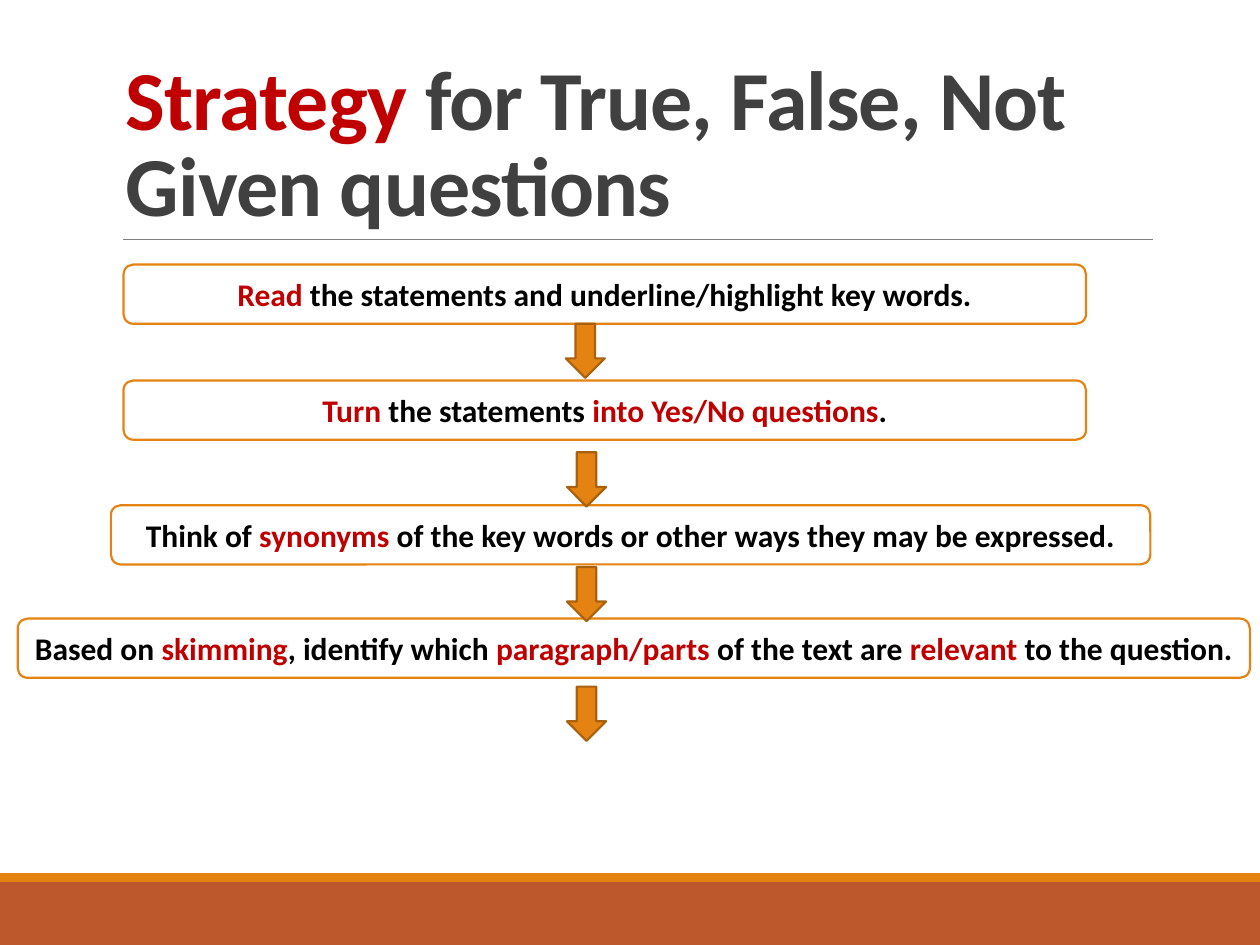
from lxml import etree
from pptx import Presentation
from pptx import util as u
from pptx.dml.color import RGBColor
from pptx.enum import shapes, text
from pptx.oxml.ns import qn

INK = {
    "red": "C00000",
    "gray": "404040",
    "black": "000000",
    "white": "FFFFFF",
    "gold": "E48312",
    "rust": "BD582C",
    "edge": "A9610D",
    "rule": "808080",
}
KIND = shapes.MSO_SHAPE
STEPS = [
    (0.98, 2.1, 7.64, "*Read* the statements and underline/highlight key words."),
    (0.98, 3.02, 7.64, "*Turn* the statements *into Yes/No questions*."),
    (0.88, 4.01, 8.25, "Think of *synonyms* of the key words or other ways they may be expressed."),
    (0.14, 4.91, 9.78, "Based on *skimming*, identify which *paragraph/parts *of the text are *relevant* to the question."),
]
ARROWS = [(4.49, 2.57), (4.5, 3.59), (4.5, 4.5), (4.5, 5.45)]


def rgb(name):
    return RGBColor.from_string(INK[name])


def write(shape, words, size=18, color="black", accent="red", align="CENTER",
          anchor="MIDDLE", lead=None, track=None):
    frame = shape.text_frame
    frame.word_wrap = True
    frame.vertical_anchor = getattr(text.MSO_ANCHOR, anchor)
    para = frame.paragraphs[0]
    para.alignment = getattr(text.PP_ALIGN, align)
    if lead:
        para.line_spacing = lead
    for i, part in enumerate(words.split("*")):
        if not part:
            continue
        run = para.add_run()
        run.text = part
        run.font.name = "Calibri"
        run.font.size = u.Pt(size)
        run.font.bold = True
        run.font.color.rgb = rgb(accent if i % 2 else color)
        if track:
            run.font._element.set("spc", str(int(track * 100)))


def draw(slide, kind, box, fill, line=None):
    shape = slide.shapes.add_shape(kind, *map(u.Inches, box))
    shape.shadow.inherit = False
    shape.fill.solid()
    shape.fill.fore_color.rgb = rgb(fill)
    if line:
        shape.line.color.rgb = rgb(line)
        shape.line.width = u.Pt(1.25)
    else:
        shape.line.fill.background()
    return shape


def rule(slide, left, right, y):
    line = slide.shapes.add_connector(
        shapes.MSO_CONNECTOR.STRAIGHT, *map(u.Inches, (left, y, right, y)))
    line.line.color.rgb = rgb("rule")
    line.line.width = u.Pt(0.5)
    etree.SubElement(line._element.spPr, qn("a:effectLst"))


def title(slide, words):
    box = slide.shapes.add_textbox(*map(u.Inches, (0.9, 0.31, 8.25, 1.59)))
    write(box, words, size=48, color="gray", align="LEFT", anchor="BOTTOM",
          lead=0.85, track=-0.5)


def main():
    deck = Presentation()
    deck.slide_width, deck.slide_height = u.Inches(10), u.Inches(7.5)
    slide = deck.slides.add_slide(deck.slide_layouts[6])
    draw(slide, KIND.RECTANGLE, (0, 7, 10, 0.5), "rust")
    draw(slide, KIND.RECTANGLE, (0, 6.93, 10, 0.07), "gold")
    rule(slide, 0.98, 9.15, 1.9)
    title(slide, "*Strategy* for True, False, Not Given questions")
    for left, top, width, words in STEPS:
        box = (left, top, width, 0.47)
        write(draw(slide, KIND.ROUNDED_RECTANGLE, box, "white", "gold"), words)
    for left, top in ARROWS:
        draw(slide, KIND.DOWN_ARROW, (left, top, 0.31, 0.43), "gold", "edge")
    deck.save("out.pptx")


if __name__ == "__main__":
    main()
